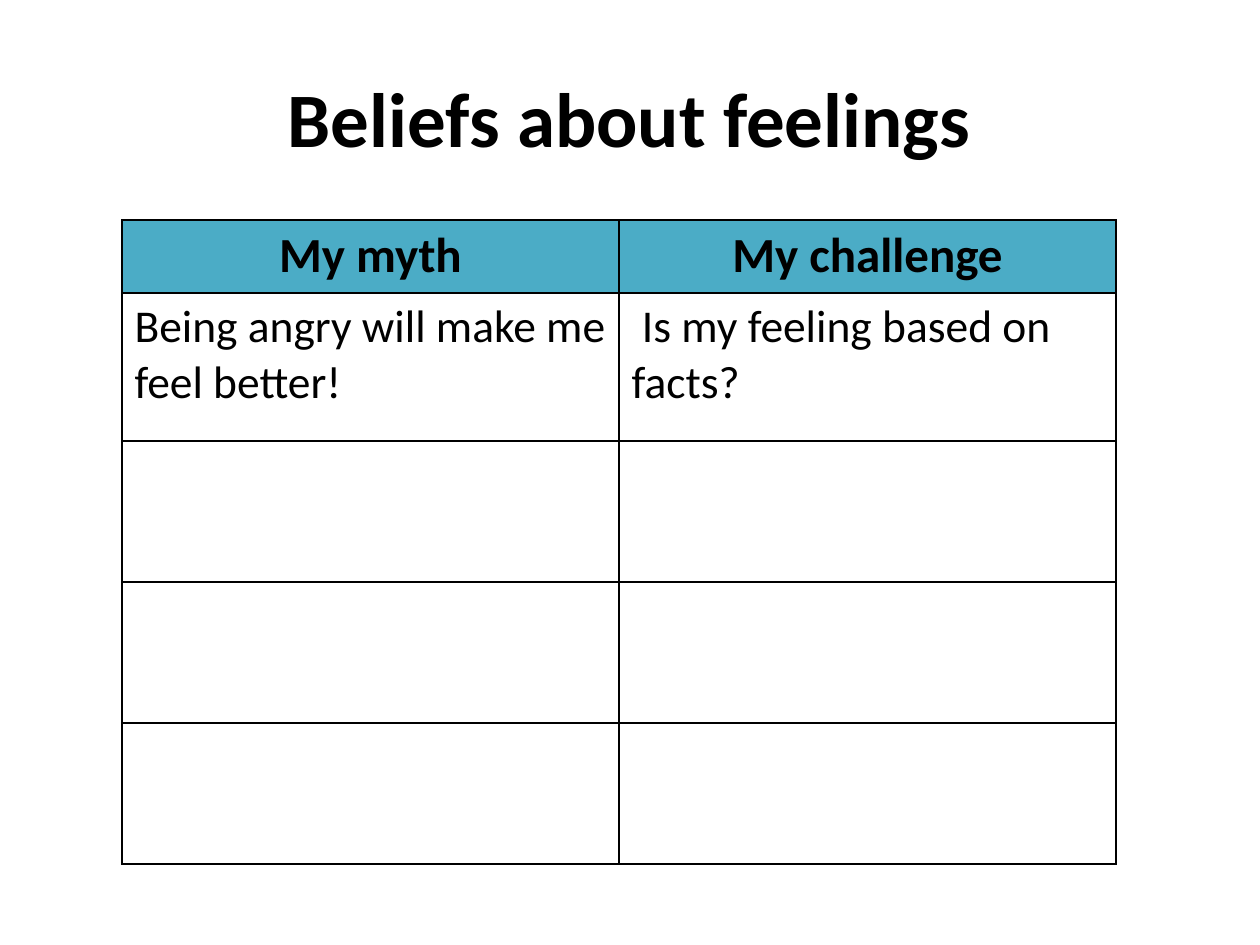
from dataclasses import dataclass

from lxml.etree import SubElement
from pptx import Presentation
from pptx.dml.color import RGBColor
from pptx.enum.text import MSO_ANCHOR, PP_ALIGN
from pptx.oxml.ns import qn
from pptx.util import Emu, Pt

PX_PER_INCH = 126


def px(length):
    return Emu(round(length * 914400 / PX_PER_INCH))


@dataclass(frozen=True)
class Theme:
    font: str = "Calibri"
    ink: str = "000000"
    header_fill: str = "4BACC6"
    title_size: int = 44
    header_size: int = 28
    body_size: int = 26
    border_width: int = 1


class SlideBuilder:
    def __init__(self, slide, theme):
        self.slide = slide
        self.theme = theme

    def style(self, paragraph, size, bold=False, align=PP_ALIGN.LEFT):
        paragraph.alignment = align
        for run in paragraph.runs:
            run.font.name = self.theme.font
            run.font.size = Pt(size)
            run.font.bold = bold
            run.font.color.rgb = RGBColor.from_string(self.theme.ink)

    def title(self, text, left, top, width, height):
        title = self.slide.shapes.title
        title.left, title.top = px(left), px(top)
        title.width, title.height = px(width), px(height)
        title.text_frame.text = text
        title.text_frame.vertical_anchor = MSO_ANCHOR.MIDDLE
        self.style(title.text_frame.paragraphs[0], self.theme.title_size,
                   True, PP_ALIGN.CENTER)

    def border(self, cell):
        properties = cell._tc.get_or_add_tcPr()
        for position, side in enumerate(("lnL", "lnR", "lnT", "lnB")):
            line = SubElement(properties, qn(f"a:{side}"),
                              w=str(Pt(self.theme.border_width)))
            fill = SubElement(line, qn("a:solidFill"))
            SubElement(fill, qn("a:srgbClr"), val=self.theme.ink)
            # Borders must come before the cell fill
            properties.insert(position, line)

    def table(self, rows, left, top, column_width, row_heights):
        columns = len(rows[0])
        table = self.slide.shapes.add_table(
            len(rows), columns, px(left), px(top),
            px(column_width * columns), px(sum(row_heights))).table
        for column in table.columns:
            column.width = px(column_width)
        for index, (texts, height) in enumerate(zip(rows, row_heights)):
            table.rows[index].height = px(height)
            for cell, text in zip(table.rows[index].cells, texts):
                self.cell(cell, text, is_header=index == 0)

    def cell(self, cell, text, is_header):
        paragraph = cell.text_frame.paragraphs[0]
        paragraph.text = text
        if is_header:
            cell.fill.solid()
            cell.fill.fore_color.rgb = RGBColor.from_string(self.theme.header_fill)
            self.style(paragraph, self.theme.header_size, True, PP_ALIGN.CENTER)
        else:
            cell.fill.background()
            self.style(paragraph, self.theme.body_size)
        self.border(cell)


def main():
    presentation = Presentation()
    presentation.slide_width = px(10 * PX_PER_INCH)
    presentation.slide_height = px(7.5 * PX_PER_INCH)
    title_only = presentation.slide_layouts[5]
    builder = SlideBuilder(presentation.slides.add_slide(title_only), Theme())

    # Heading
    builder.title("Beliefs about feelings", 63, 38, 1133, 158)

    # Worksheet: one worked example, then rows to fill in
    blank_rows = 3
    beliefs = [
        ("My myth", "My challenge"),
        ("Being angry will make me feel better!",
         " Is my feeling based on facts?"),
    ] + [("", "")] * blank_rows
    builder.table(beliefs, left=122, top=220, column_width=497,
                  row_heights=[73, 148] + [141] * blank_rows)

    presentation.save("out.pptx")


if __name__ == "__main__":
    main()
